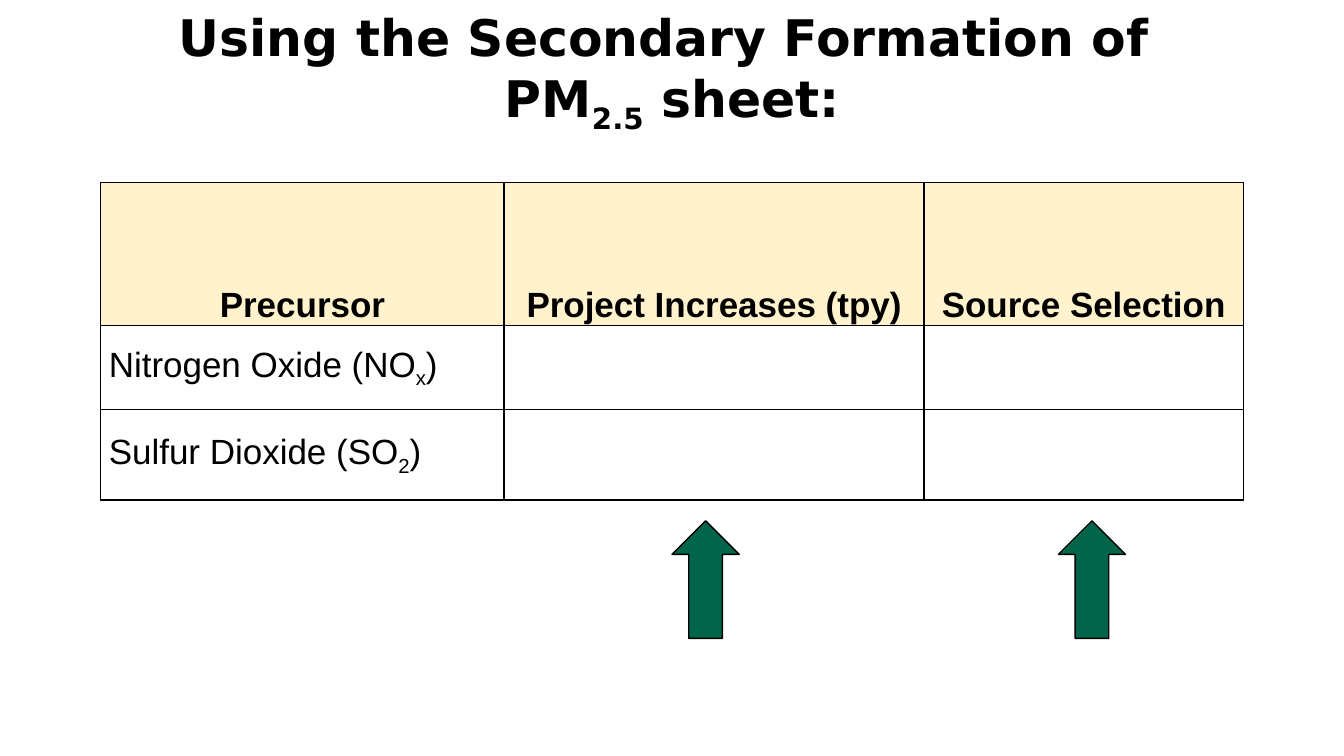
from dataclasses import dataclass

from lxml.etree import SubElement
from pptx import Presentation
from pptx.dml.color import RGBColor
from pptx.enum.shapes import MSO_SHAPE
from pptx.enum.text import MSO_ANCHOR, MSO_AUTO_SIZE, PP_ALIGN
from pptx.oxml.ns import qn
from pptx.util import Inches, Pt

BLACK = RGBColor(0x00, 0x00, 0x00)
WHITE = RGBColor(0xFF, 0xFF, 0xFF)
CREAM = RGBColor(0xFF, 0xF2, 0xCC)
GREEN = RGBColor(0x01, 0x65, 0x4B)

SLIDE_WIDTH, SLIDE_HEIGHT = Inches(13.33), Inches(7.5)
GRID_COLUMNS, GRID_ROWS = 80, 45
COLUMN_SPANS = (24, 25, 19)
ROW_SPANS = (8.5, 5, 5.4)
ARROW_COLUMNS = (40, 63)


@dataclass(frozen=True)
class Label:
    """Text with an optional subscript and the text after it."""
    lead: str
    subscript: str = ""
    tail: str = ""


@dataclass(frozen=True)
class TextStyle:
    """Font and alignment of one paragraph."""
    font: str
    size: float
    bold: bool
    align: PP_ALIGN


TITLE = Label("PM", "2.5", " sheet:")
TITLE_STYLE = TextStyle("DejaVu Sans", 36, True, PP_ALIGN.CENTER)
HEADER_STYLE = TextStyle("Arial", 25, True, PP_ALIGN.CENTER)
BODY_STYLE = TextStyle("Arial", 25, False, PP_ALIGN.LEFT)
HEADERS = (Label("Precursor"), Label("Project Increases (tpy)"), Label("Source Selection"))
PRECURSORS = (Label("Nitrogen Oxide (NO", "x", ")"), Label("Sulfur Dioxide (SO", "2", ")"))


def across(columns: float) -> int:
    """Convert grid columns to a length."""
    return round(SLIDE_WIDTH * columns / GRID_COLUMNS)


def down(rows: float) -> int:
    """Convert grid rows to a length."""
    return round(SLIDE_HEIGHT * rows / GRID_ROWS)


def write_label(paragraph, label: Label, style: TextStyle) -> None:
    """Add a label to a paragraph and style it."""
    for text in filter(None, (label.lead, label.subscript, label.tail)):
        run = paragraph.add_run()
        run.text = text
        if text == label.subscript:
            run._r.get_or_add_rPr().set("baseline", "-25000")
    paragraph.alignment = style.align
    paragraph.font.name = style.font
    paragraph.font.size = Pt(style.size)
    paragraph.font.bold = style.bold
    paragraph.font.color.rgb = BLACK


def write_title(slide) -> None:
    """Place and fill the title."""
    title = slide.shapes.title
    title.left, title.top = across(8.34), down(1)
    title.width, title.height = across(63.36), down(6.5)
    frame = title.text_frame
    frame.auto_size = MSO_AUTO_SIZE.NONE
    frame.word_wrap = True
    frame.vertical_anchor = MSO_ANCHOR.MIDDLE
    paragraph = frame.paragraphs[0]
    paragraph.line_spacing = 0.9
    paragraph.add_run().text = "Using the Secondary Formation of "
    paragraph.add_line_break()
    write_label(paragraph, TITLE, TITLE_STYLE)


def format_cell(cell, fill: RGBColor, anchor: MSO_ANCHOR) -> None:
    """Give a cell its borders, margins, anchor and fill."""
    properties = cell._tc.get_or_add_tcPr()
    for side in ("a:lnL", "a:lnR", "a:lnT", "a:lnB"):
        border = SubElement(properties, qn(side), w=str(Pt(1)))
        solid = SubElement(border, qn("a:solidFill"))
        SubElement(solid, qn("a:srgbClr"), val=str(BLACK))
    cell.margin_left = cell.margin_right = Inches(0.08)
    cell.margin_top, cell.margin_bottom = Inches(0.01), 0
    cell.vertical_anchor = anchor
    cell.fill.solid()
    cell.fill.fore_color.rgb = fill


def write_cell(cell, label: Label, style: TextStyle) -> None:
    """Write a label into a table cell."""
    paragraph = cell.text_frame.paragraphs[0]
    paragraph.space_after = Pt(6)
    write_label(paragraph, label, style)


def draw_precursor_table(slide) -> None:
    """Draw the table of precursors."""
    table = slide.shapes.add_table(
        len(ROW_SPANS), len(COLUMN_SPANS), across(6), down(10.86),
        across(sum(COLUMN_SPANS)), down(sum(ROW_SPANS))).table
    for column, span in zip(table.columns, COLUMN_SPANS):
        column.width = across(span)
    for row, span in zip(table.rows, ROW_SPANS):
        row.height = down(span)
    for index, row in enumerate(table.rows):
        for cell in row.cells:
            if index == 0:
                format_cell(cell, CREAM, MSO_ANCHOR.BOTTOM)
            else:
                format_cell(cell, WHITE, MSO_ANCHOR.MIDDLE)
    for column, header in enumerate(HEADERS):
        write_cell(table.cell(0, column), header, HEADER_STYLE)
    for row, precursor in enumerate(PRECURSORS, start=1):
        write_cell(table.cell(row, 0), precursor, BODY_STYLE)


def draw_arrow(slide, column: float) -> None:
    """Draw an arrow pointing up at the table."""
    arrow = slide.shapes.add_shape(
        MSO_SHAPE.UP_ARROW, across(column), down(31), across(4), down(7))
    arrow.shadow.inherit = False
    arrow.fill.solid()
    arrow.fill.fore_color.rgb = GREEN
    arrow.line.color.rgb = BLACK
    arrow.line.width = Pt(1)


def main() -> None:
    """Build and save the slide."""
    presentation = Presentation()
    presentation.slide_width, presentation.slide_height = SLIDE_WIDTH, SLIDE_HEIGHT
    slide = presentation.slides.add_slide(presentation.slide_layouts.get_by_name("Title Only"))
    write_title(slide)
    draw_precursor_table(slide)
    for column in ARROW_COLUMNS:
        draw_arrow(slide, column)
    presentation.save("out.pptx")


if __name__ == "__main__":
    main()
